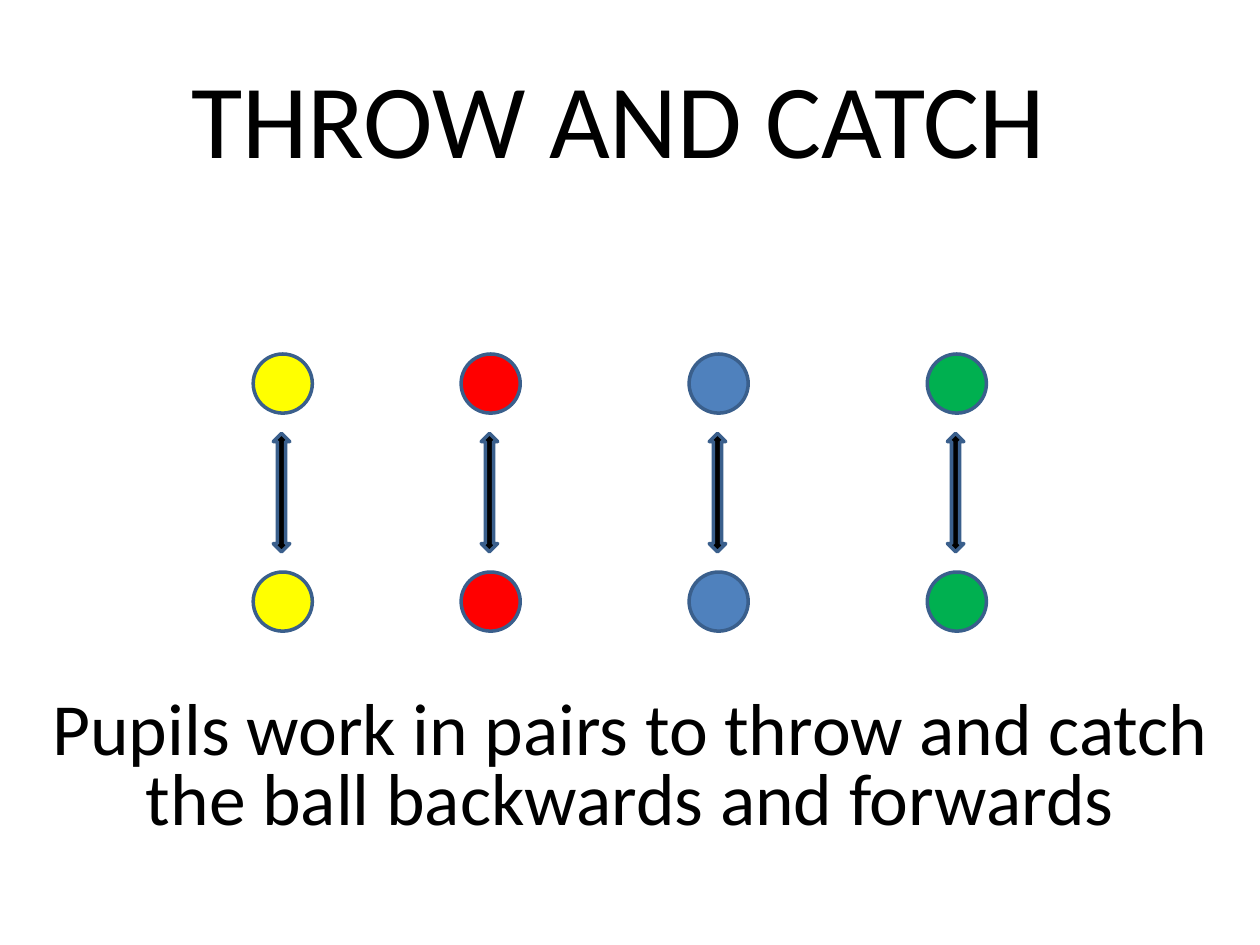
from dataclasses import dataclass

import pptx
import pptx.dml.color
import pptx.enum.shapes
import pptx.enum.text
import pptx.util

Pt = pptx.util.Pt
RGB = pptx.dml.color.RGBColor.from_string
MSO_SHAPE = pptx.enum.shapes.MSO_SHAPE


@dataclass(frozen=True)
class Theme:
    font: str = "Calibri"
    ink: str = "000000"
    outline: str = "3A5F8C"
    yellow: str = "FFFF00"
    red: str = "FF0000"
    blue: str = "4F81BD"
    green: str = "00B050"
    title_size: float = 60
    body_size: float = 42
    line_width: float = 2


@dataclass(frozen=True)
class Box:
    left: float
    top: float
    width: float
    height: float

    def lengths(self) -> list[pptx.util.Length]:
        return [Pt(v) for v in (self.left, self.top, self.width, self.height)]


@dataclass(frozen=True)
class Caption:
    text: str
    box: Box
    size: float
    spacing: float


@dataclass(frozen=True)
class Pair:
    left: float
    color: str


THEME = Theme()
BALL = 33.8
BALL_TOPS = (202.3, 326.9)
ARROW_WIDTH, ARROW_HEIGHT = 9.4, 67.7
ARROW_INSET = 11.5
ARROW_TOP = (BALL_TOPS[0] + BALL + BALL_TOPS[1] - ARROW_HEIGHT) / 2

CAPTIONS = (
    Caption("THROW AND CATCH ", Box(36, 21.6, 648, 90), THEME.title_size, 1.0),
    Caption(
        "Pupils work in pairs to throw and catch the ball backwards and forwards",
        Box(0, 394.6, 720, 90), THEME.body_size, 0.8,
    ),
)
PAIRS = (
    Pair(144.7, THEME.yellow),
    Pair(263.5, THEME.red),
    Pair(393.8, THEME.blue),
    Pair(529.9, THEME.green),
)


def set_all(target, values: dict) -> None:
    for name, value in values.items():
        setattr(target, name, value)


def add_caption(s, caption: Caption) -> None:
    tf = s.shapes.add_textbox(*caption.box.lengths()).text_frame
    set_all(tf, {
        "word_wrap": True,
        "vertical_anchor": pptx.enum.text.MSO_ANCHOR.MIDDLE,
    })
    p = tf.paragraphs[0]
    set_all(p, {
        "alignment": pptx.enum.text.PP_ALIGN.CENTER,
        "line_spacing": caption.spacing,
    })
    r = p.add_run()
    r.text = caption.text
    set_all(r.font, {"name": THEME.font, "size": Pt(caption.size)})
    r.font.color.rgb = RGB(THEME.ink)


def add_outlined(s, kind: MSO_SHAPE, box: Box, color: str) -> None:
    sp = s.shapes.add_shape(kind, *box.lengths())
    sp.shadow.inherit = False
    sp.fill.solid()
    sp.fill.fore_color.rgb = RGB(color)
    sp.line.color.rgb = RGB(THEME.outline)
    sp.line.width = Pt(THEME.line_width)


def add_pair(s, pair: Pair) -> None:
    for top in BALL_TOPS:
        add_outlined(s, MSO_SHAPE.OVAL, Box(pair.left, top, BALL, BALL), pair.color)
    arrow = Box(pair.left + ARROW_INSET, ARROW_TOP, ARROW_WIDTH, ARROW_HEIGHT)
    add_outlined(s, MSO_SHAPE.UP_DOWN_ARROW, arrow, THEME.ink)


def main() -> None:
    prs = pptx.Presentation()
    set_all(prs, {"slide_width": Pt(720), "slide_height": Pt(540)})
    s = prs.slides.add_slide(prs.slide_layouts[6])
    for caption in CAPTIONS:
        add_caption(s, caption)
    for pair in PAIRS:
        add_pair(s, pair)
    prs.save("out.pptx")


if __name__ == "__main__":
    main()
